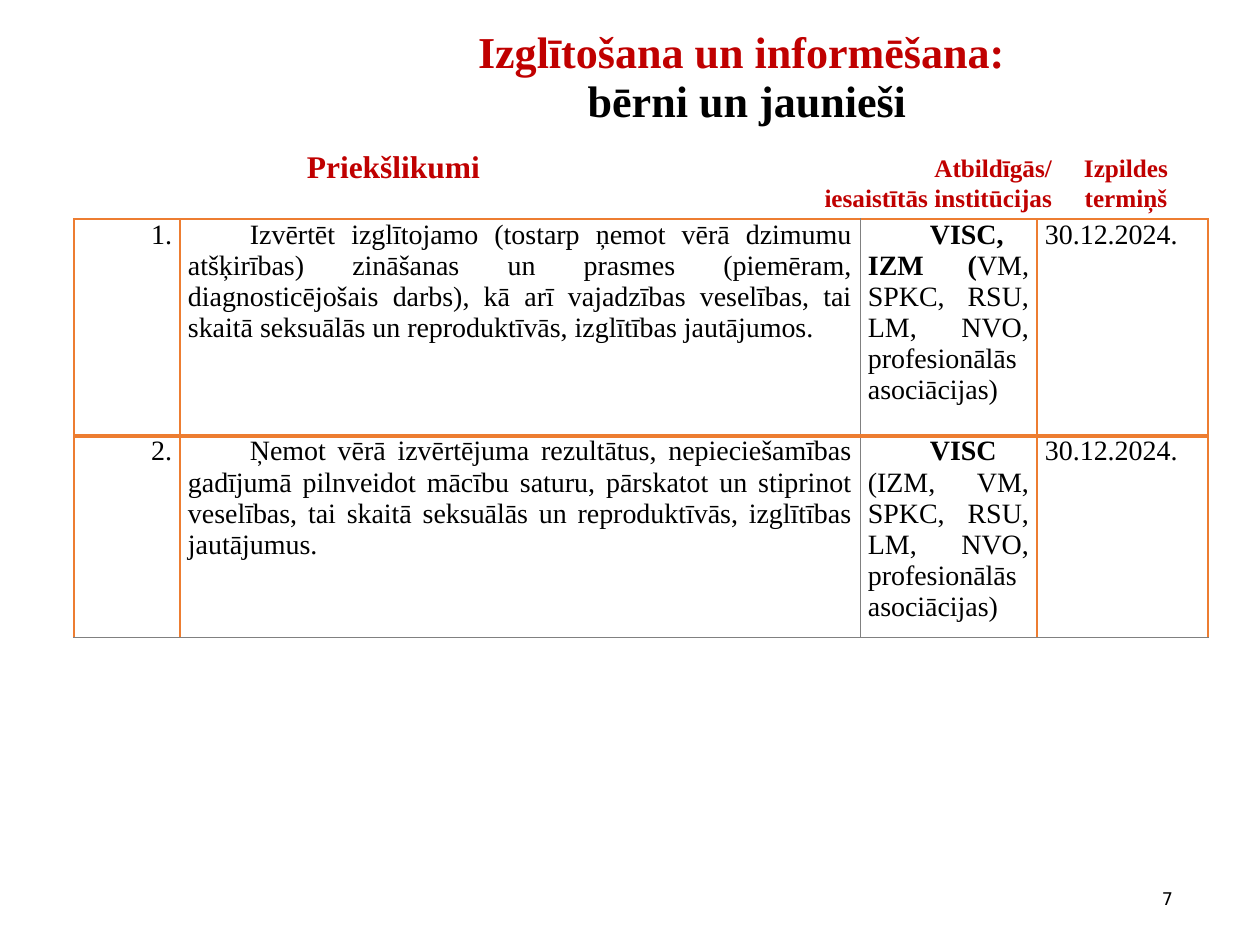
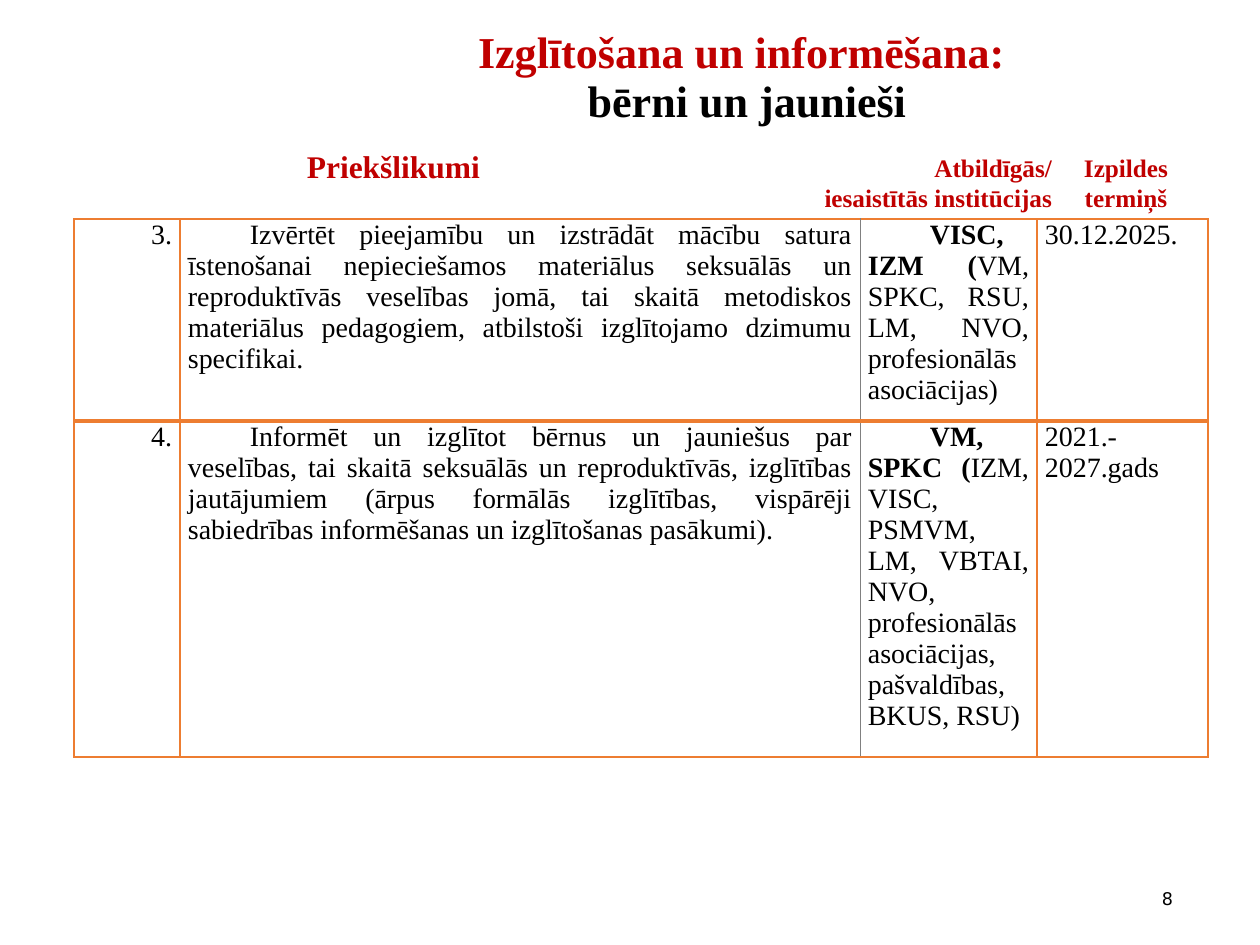
from lxml.etree import SubElement
from pptx import Presentation
from pptx.dml.color import RGBColor
from pptx.enum.text import MSO_ANCHOR as ANCHOR, MSO_AUTO_SIZE as AUTO, PP_ALIGN as ALIGN
from pptx.oxml.ns import qn
from pptx.util import Pt

PX = 914400 / 126
RED, BLACK, WHITE, ORANGE, GRAY = "C00000", "000000", "FFFFFF", "ED7D31", "808080"
SERIF, SANS = "Times New Roman", "DejaVu Sans"
COLS = [106, 680, 177, 171]
HEADERS = [
    ((300, 147, 187, 36), ["Priekšlikumi"], 18, ALIGN.CENTER),
    ((800, 152, 252, 60), ["Atbildīgās/", "iesaistītās institūcijas"], 14.4, ALIGN.RIGHT),
    ((1066, 152, 120, 60), ["Izpildes", "termiņš"], 14.4, ALIGN.CENTER),
]
SLIDES = [
    (7, [217, 187], GRAY, [
        ("1.", "Izvērtēt izglītojamo (tostarp ņemot vērā dzimumu atšķirības) zināšanas un prasmes "
               "(piemēram, diagnosticējošais darbs), kā arī vajadzības veselības, tai skaitā "
               "seksuālās un reproduktīvās, izglītības jautājumos.",
         "VISC, IZM (", "VM, SPKC, RSU, LM, NVO, profesionālās asociācijas)", "30.12.2024."),
        ("2.", "Ņemot vērā izvērtējuma rezultātus, nepieciešamības gadījumā pilnveidot mācību "
               "saturu, pārskatot un stiprinot veselības, tai skaitā seksuālās un reproduktīvās, "
               "izglītības jautājumus.",
         "VISC", " (IZM, VM, SPKC, RSU, LM, NVO, profesionālās asociācijas)", "30.12.2024."),
    ]),
    (8, [202, 315], ORANGE, [
        ("3.", "Izvērtēt pieejamību un izstrādāt mācību satura īstenošanai nepieciešamos materiālus "
               "seksuālās un reproduktīvās veselības jomā, tai skaitā metodiskos materiālus "
               "pedagogiem, atbilstoši izglītojamo dzimumu specifikai.",
         "VISC, IZM (", "VM, SPKC, RSU, LM, NVO, profesionālās asociācijas)", "30.12.2025."),
        ("4.", "Informēt un izglītot bērnus un jauniešus par veselības, tai skaitā seksuālās un "
               "reproduktīvās, izglītības jautājumiem (ārpus formālās izglītības, vispārēji "
               "sabiedrības informēšanas un izglītošanas pasākumi).",
         "VM, SPKC (", "IZM, VISC, PSMVM, LM, VBTAI, NVO, profesionālās asociācijas, "
                       "pašvaldības, BKUS, RSU)", "2021.-2027.gads"),
    ]),
]


def px(n):
    return round(n * PX)


def rgb(color):
    return RGBColor.from_string(color)


class Deck:
    def __init__(self):
        self.prs = Presentation()
        self.prs.slide_width, self.prs.slide_height = px(1260), px(945)

    def slide(self):
        self.s = self.prs.slides.add_slide(self.prs.slide_layouts[5])

    def run(self, p, text, size, color=BLACK, bold=False, font=SERIF):
        r = p.add_run()
        r.text = text
        r.font.size, r.font.bold, r.font.name = Pt(size), bold, font
        r.font.color.rgb = rgb(color)

    def title(self, first, second):
        sp = self.s.shapes.title
        sp.left, sp.top, sp.width, sp.height = map(px, (286, 23, 922, 115))
        tf = sp.text_frame
        tf.auto_size, tf.vertical_anchor = AUTO.NONE, ANCHOR.TOP
        p = tf.paragraphs[0]
        p.alignment, p.line_spacing = ALIGN.CENTER, 0.93
        self.run(p, first, 25.2, RED, True)
        p.add_line_break()
        self.run(p, second, 25.2, BLACK, True)

    def text(self, box, lines, size, align, anchor=ANCHOR.TOP, **style):
        tf = self.s.shapes.add_textbox(*map(px, box)).text_frame
        tf.word_wrap, tf.vertical_anchor = True, anchor
        tf.margin_left = tf.margin_right = tf.margin_top = tf.margin_bottom = 0
        for i, line in enumerate(lines):
            p = tf.add_paragraph() if i else tf.paragraphs[0]
            p.alignment = align
            self.run(p, line, size, **style)

    def border(self, cell, side, color, width):
        ln = SubElement(cell._tc.get_or_add_tcPr(), qn(f"a:ln{side}"), w=str(Pt(width)))
        SubElement(SubElement(ln, qn("a:solidFill")), qn("a:srgbClr"), val=color)

    def cell(self, cell, runs, align, indent, borders):
        cell.margin_left = cell.margin_right = px(8)
        cell.margin_top = cell.margin_bottom = 0
        p = cell.text_frame.paragraphs[0]
        p.alignment = align
        if indent:
            pPr = p._p.get_or_add_pPr()
            pPr.set("marL", "0")
            pPr.set("indent", str(px(62)))
        for text, bold in runs:
            self.run(p, text, 16, bold=bold)
        for side, (color, width) in borders.items():
            self.border(cell, side, color, width)
        cell.fill.solid()
        cell.fill.fore_color.rgb = rgb(WHITE)

    def table(self, heights, bottom, rows):
        box = (74, 219, sum(COLS), sum(heights))
        tbl = self.s.shapes.add_table(len(rows), len(COLS), *map(px, box)).table
        tbl.first_row = tbl.horz_banding = False
        for col, width in zip(tbl.columns, COLS):
            col.width = px(width)
        edge, thin, thick = (ORANGE, 1), (GRAY, 0.5), (ORANGE, 2)
        last = len(rows) - 1
        for i, (number, proposal, lead, others, term) in enumerate(rows):
            tbl.rows[i].height = px(heights[i])
            contents = [[(number, False)], [(proposal, False)],
                        [(lead, True), (others, False)], [(term, False)]]
            for j, runs in enumerate(contents):
                borders = {
                    "L": thin if j == 2 else edge,
                    "R": thin if j == 1 else edge,
                    "T": thick if i else edge,
                    "B": (bottom, 0.5 if bottom == GRAY else 1) if i == last else thick,
                }
                align = ALIGN.JUSTIFY if j else ALIGN.RIGHT
                self.cell(tbl.cell(i, j), runs, align, j in (1, 2), borders)

    def page_number(self, number):
        self.text((1078, 874, 95, 50), [str(number)], 10, ALIGN.RIGHT, ANCHOR.MIDDLE, font=SANS)


def main():
    deck = Deck()
    for number, heights, bottom, rows in SLIDES:
        deck.slide()
        deck.page_number(number)
        deck.title("Izglītošana un informēšana: ", "bērni un jaunieši")
        for box, lines, size, align in HEADERS:
            deck.text(box, lines, size, align, color=RED, bold=True)
        deck.table(heights, bottom, rows)
    deck.prs.save("out.pptx")


if __name__ == "__main__":
    main()
